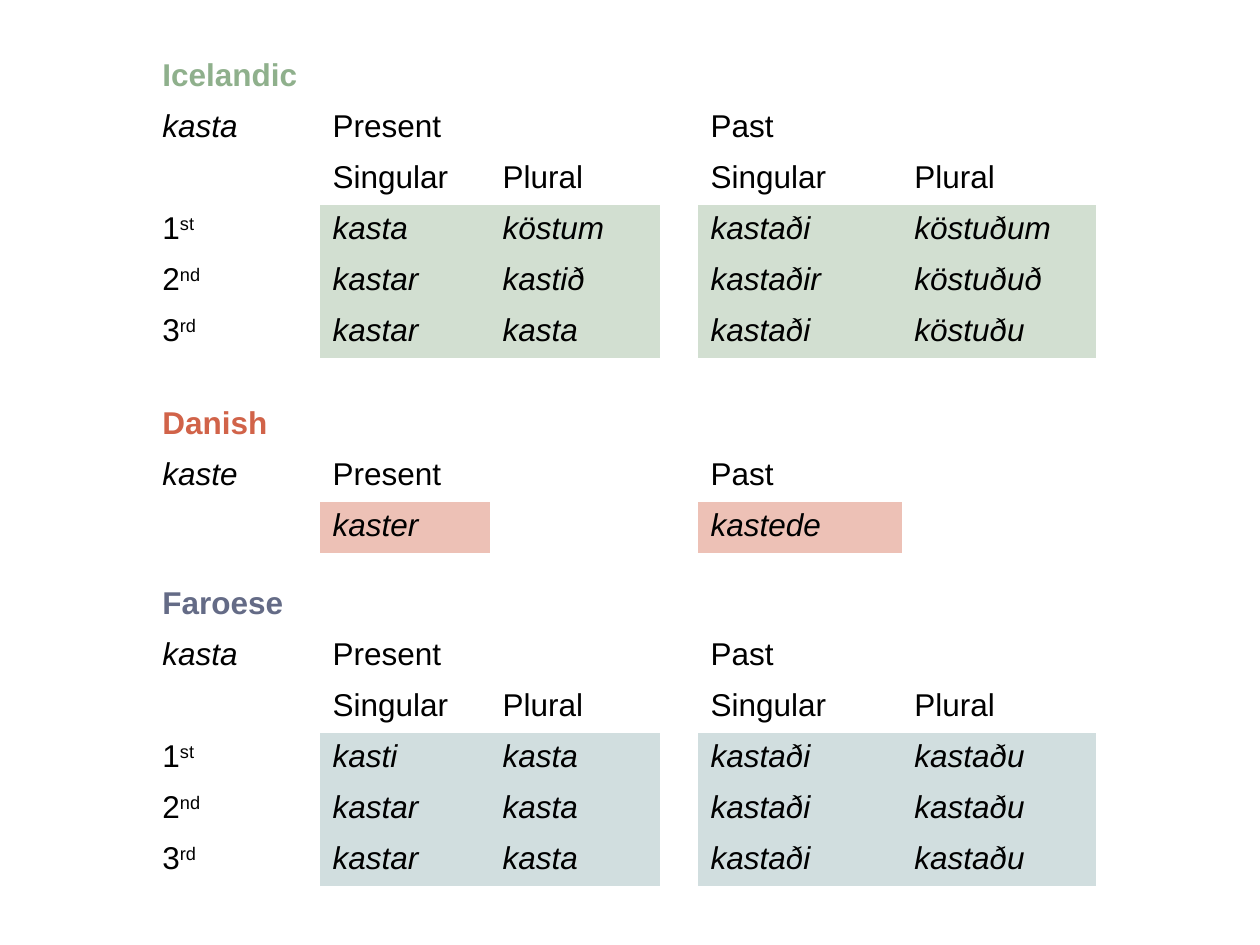
from pptx import Presentation
from pptx.dml.color import RGBColor as RGB
from pptx.oxml.ns import qn
from pptx.util import Cm, Pt

ORDINALS = {"1": "st", "2": "nd", "3": "rd"}
TENSES = ["Present", "", "", "Past", ""]
NUMBERS = ["", "Singular", "Plural", "", "Singular", "Plural"]

# Each form row: person, present singular and plural, gap, past singular and plural
LANGUAGES = [
    {"name": "Icelandic", "verb": "kasta", "top": 1.04, "numbers": [NUMBERS],
     "forms": [["1", "kasta", "köstum", "", "kastaði", "köstuðum"],
               ["2", "kastar", "kastið", "", "kastaðir", "köstuðuð"],
               ["3", "kastar", "kasta", "", "kastaði", "köstuðu"]]},
    {"name": "Danish", "verb": "kaste", "top": 8.05, "numbers": [],
     "forms": [["", "kaster", "", "", "kastede", ""]]},
    {"name": "Faroese", "verb": "kasta", "top": 11.68, "numbers": [NUMBERS],
     "forms": [["1", "kasti", "kasta", "", "kastaði", "kastaðu"],
               ["2", "kastar", "kasta", "", "kastaði", "kastaðu"],
               ["3", "kastar", "kasta", "", "kastaði", "kastaðu"]]},
]

THEME = {
    "font": "Arial", "size": Pt(18), "ink": "000000",
    "Icelandic": {"heading": "8FB08C", "fill": "D2DFD1"},
    "Danish": {"heading": "D16349", "fill": "EDC1B6"},
    "Faroese": {"heading": "646B86", "fill": "D1DEDF"},
}
LEFT = 3.02
COLUMN_WIDTHS = [3.43, 3.43, 3.43, 0.76, 4.11, 3.91]
ROW_HEIGHT = 1.03
PLAIN_TABLE_STYLE = "{2D5ABB26-0587-4C30-8999-92F81FD0307C}"


def write(cell, text, color=THEME["ink"], **formats):
    span = cell.text_frame.paragraphs[0].add_run()
    span.text = text
    span.font.color.rgb = RGB.from_string(color)
    values = {"name": THEME["font"], "size": THEME["size"], **formats}
    for attribute, value in values.items():
        setattr(span.font, attribute, value)
    return span


def write_form(cell, text, fill):
    """Write a person label with raised ending, or an italic form on a tint."""
    if text in ORDINALS:
        write(cell, text)
        ending = write(cell, ORDINALS[text])
        ending.font._element.set("baseline", "30000")
    else:
        write(cell, text, italic=True)
        cell.fill.solid()
        cell.fill.fore_color.rgb = RGB.from_string(fill)


def add_conjugation(page, language):
    colors = THEME[language["name"]]
    heading = [language["name"], "", "", "", "", ""]
    rows = [heading, [language["verb"], *TENSES],
            *language["numbers"], *language["forms"]]
    first_form = len(rows) - len(language["forms"])
    frame = page.shapes.add_table(
        len(rows), len(COLUMN_WIDTHS), Cm(LEFT), Cm(language["top"]),
        Cm(sum(COLUMN_WIDTHS)), Cm(ROW_HEIGHT * len(rows)))
    frame.element.find(".//" + qn("a:tableStyleId")).text = PLAIN_TABLE_STYLE
    table = frame.table
    table.first_row = table.horz_banding = False
    for column, width in zip(table.columns, COLUMN_WIDTHS):
        column.width = Cm(width)
    for row_index, row in enumerate(rows):
        table.rows[row_index].height = Cm(ROW_HEIGHT)
        for column_index, text in enumerate(row):
            cell = table.cell(row_index, column_index)
            if not text:
                cell.fill.background()
            elif row_index >= first_form:
                write_form(cell, text, colors["fill"])
            elif row_index == 0:
                write(cell, text, colors["heading"], bold=True)
            else:
                write(cell, text, italic=column_index == 0)


def main():
    deck = Presentation()
    deck.slide_width, deck.slide_height = Cm(25.4), Cm(19.05)
    page = deck.slides.add_slide(deck.slide_layouts.get_by_name("Blank"))
    for language in LANGUAGES:
        add_conjugation(page, language)
    deck.save("out.pptx")


if __name__ == "__main__":
    main()
